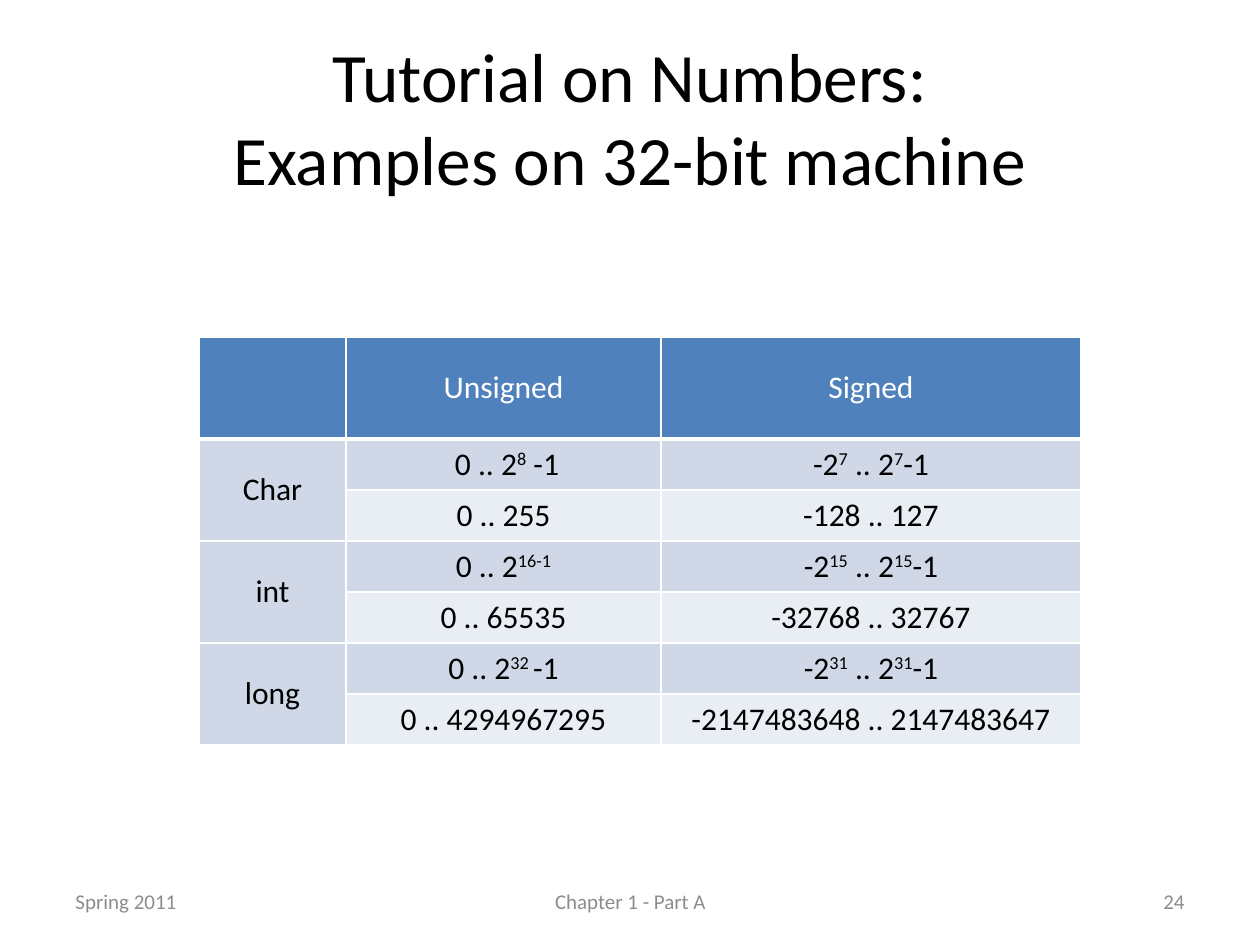
import pptx
import pptx.dml.color
import pptx.enum.text
import pptx.oxml
import pptx.oxml.ns
import pptx.util

EMU_PER_PX = 914400 / 126
FONT = "Calibri"
COLORS = {
    "text": "000000",
    "footer": "8C8C8C",
    "header": "4F81BD",
    "white": "FFFFFF",
    "band_dark": "D0D8E8",
    "band_light": "E9EDF4",
}
ALIGN = pptx.enum.text.PP_ALIGN
MIDDLE = pptx.enum.text.MSO_ANCHOR.MIDDLE
TOP = pptx.enum.text.MSO_ANCHOR.TOP

COLUMN_WIDTHS = [147, 315, 420]
HEADER_HEIGHT, ROW_HEIGHT = 102, 51
HEADINGS = ["", "Unsigned", "Signed"]
# Carets enclose superscripts; each type has a formula row and a value row.
TYPES = [
    ("Char", [(" 0 .. 2^8^ -1", "-2^7^ .. 2^7^-1"), ("0 .. 255", "-128 .. 127")]),
    ("int", [("0 .. 2^16-1^", "-2^15^ .. 2^15^-1"), ("0 .. 65535", "-32768 .. 32767")]),
    ("long", [("0 .. 2^32 ^-1", "-2^31^ .. 2^31^-1"),
              ("0 .. 4294967295", "-2147483648 .. 2147483647")]),
]


def px(length):
    return pptx.util.Emu(round(length * EMU_PER_PX))


def rgb(name):
    return pptx.dml.color.RGBColor.from_string(COLORS[name])


def write_text(frame, text, size=18, color="text", align=ALIGN.CENTER, anchor=MIDDLE):
    frame.word_wrap = True
    frame.vertical_anchor = anchor
    paragraph = frame.paragraphs[0]
    paragraph.alignment = align
    for line_number, line in enumerate(text.split("\n")):
        if line_number:
            paragraph.add_line_break()
        for part_number, part in enumerate(line.split("^")):
            if not part:
                continue
            run = paragraph.add_run()
            run.text = part
            run.font.name = FONT
            run.font.size = pptx.util.Pt(size)
            run.font.color.rgb = rgb(color)
            if part_number % 2:
                run.font._element.set("baseline", "30000")


def add_text(slide, text, left, top, width, height, **text_format):
    shape = slide.shapes.add_textbox(px(left), px(top), px(width), px(height))
    write_text(shape.text_frame, text, **text_format)


def set_borders(cell, bottom=1):
    properties = cell._tc.get_or_add_tcPr()
    widths = {"lnL": 1, "lnR": 1, "lnT": 1, "lnB": bottom}
    for index, (tag, points) in enumerate(widths.items()):
        line = pptx.oxml.parse_xml(
            f'<a:{tag} {pptx.oxml.ns.nsdecls("a")} w="{pptx.util.Pt(points)}">'
            f'<a:solidFill><a:srgbClr val="{COLORS["white"]}"/></a:solidFill></a:{tag}>')
        properties.insert(index, line)


def fill_cell(cell, text, fill, bottom=1, anchor=MIDDLE, **text_format):
    cell.fill.solid()
    cell.fill.fore_color.rgb = rgb(fill)
    set_borders(cell, bottom)
    write_text(cell.text_frame, text, **text_format)
    cell.text_frame.word_wrap = None
    cell.vertical_anchor = anchor


def add_range_table(slide, left, top):
    heights = [HEADER_HEIGHT] + [ROW_HEIGHT] * (2 * len(TYPES))
    table = slide.shapes.add_table(
        len(heights), len(COLUMN_WIDTHS), px(left), px(top),
        px(sum(COLUMN_WIDTHS)), px(sum(heights))).table
    for column, width in zip(table.columns, COLUMN_WIDTHS):
        column.width = px(width)
    for row, height in zip(table.rows, heights):
        row.height = px(height)

    # Header row
    table.first_row = table.horz_banding = False
    for column, heading in enumerate(HEADINGS):
        fill_cell(table.cell(0, column), heading, "header", bottom=3, color="white")

    # Two rows per type, with the type name spanning both
    for index, (type_name, ranges) in enumerate(TYPES):
        first = 1 + 2 * index
        table.cell(first, 0).merge(table.cell(first + 1, 0))
        fill_cell(table.cell(first, 0), type_name, "band_dark")
        set_borders(table.cell(first + 1, 0))
        for offset, (texts, fill) in enumerate(zip(ranges, ("band_dark", "band_light"))):
            for column, text in enumerate(texts, start=1):
                fill_cell(table.cell(first + offset, column), text, fill, anchor=TOP)


def main():
    presentation = pptx.Presentation()
    presentation.slide_width, presentation.slide_height = px(1260), px(945)
    slide = presentation.slides.add_slide(presentation.slide_layouts[6])

    # Title
    add_text(slide, "Tutorial on Numbers:\nExamples on 32-bit machine",
             63, 38, 1134, 157, size=39.6)

    # Number ranges
    add_range_table(slide, 199, 337)

    # Footer
    for text, left, width, align in [
        ("Spring 2011", 63, 294, ALIGN.LEFT),
        ("24", 903, 294, ALIGN.RIGHT),
        ("Chapter 1 - Part A", 431, 399, ALIGN.CENTER),
    ]:
        add_text(slide, text, left, 876, width, 50, size=12, color="footer", align=align)

    presentation.save("out.pptx")


if __name__ == "__main__":
    main()
